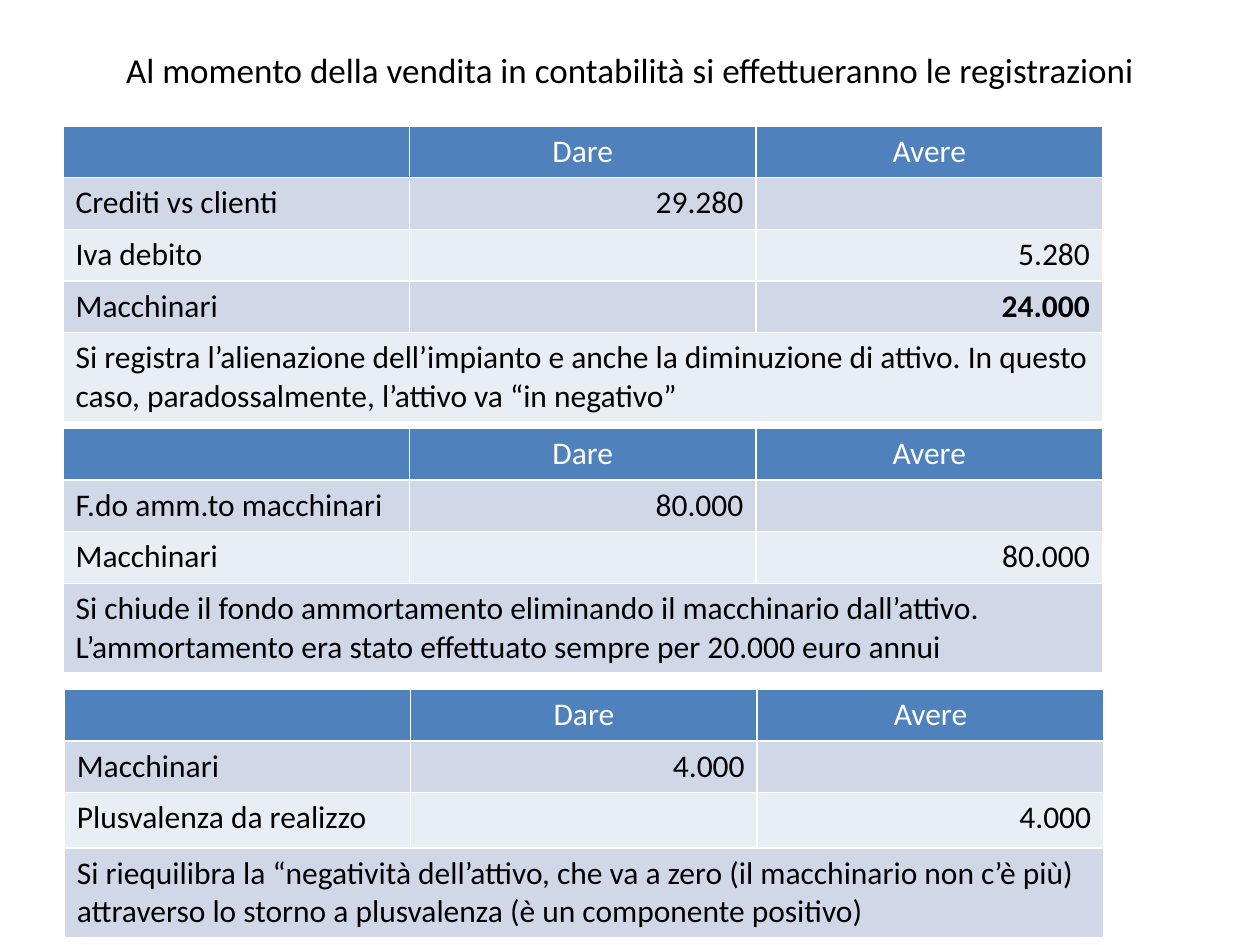
from pptx import Presentation
from pptx.dml.color import RGBColor
from pptx.enum.text import MSO_ANCHOR, PP_ALIGN as Align
from pptx.util import Inches, Pt

FONT = "Calibri"
BLACK, WHITE = "000000", "FFFFFF"
HEADER_FILL = "4F81BD"
BAND_FILLS = ("D0D8E8", "E9EDF4")
LEFT, COLUMN_WIDTH = 0.5, 2.75
ROW_HEIGHT, NOTE_HEIGHT = 0.41, 0.7
HEADINGS = ("", "Dare", "Avere")
COLUMN_ALIGNS = (Align.LEFT, Align.RIGHT, Align.RIGHT)

# Each journal entry: left, top, height of its last posting, postings, note
ENTRIES = [
    (LEFT, 1, ROW_HEIGHT,
     [("Crediti vs clienti", "29.280", ""),
      ("Iva debito", "", "5.280"),
      ("Macchinari", "", "24.000")],
     "Si registra l’alienazione dell’impianto e anche la diminuzione di attivo. "
     "In questo caso, paradossalmente, l’attivo va “in negativo”"),
    (LEFT, 3.4, ROW_HEIGHT,
     [("F.do amm.to macchinari", "80.000", ""),
      ("Macchinari", "", "80.000")],
     "Si chiude il fondo ammortamento eliminando il macchinario dall’attivo. "
     "L’ammortamento era stato effettuato sempre per 20.000 euro annui"),
    (LEFT + 0.01, 5.47, 0.44,
     [("Macchinari", "4.000", ""),
      ("Plusvalenza da realizzo", "", "4.000")],
     "Si riequilibra la “negatività dell’attivo, che va a zero (il macchinario "
     "non c’è più) attraverso lo storno a plusvalenza (è un componente positivo)"),
]
BOLD_AMOUNT = "24.000"


def color(value):
    return RGBColor.from_string(value)


def write(frame, text, size, text_color, align, bold=False):
    para = frame.paragraphs[0]
    para.alignment = align
    span = para.add_run()
    span.text = text
    for name, value in dict(name=FONT, size=Pt(size), bold=bold).items():
        setattr(span.font, name, value)
    span.font.color.rgb = color(text_color)


def add_title(page, text):
    title = page.shapes.title
    place = dict(left=0.5, top=0.3, width=9, height=0.51)
    for name, value in place.items():
        setattr(title, name, Inches(value))
    title.text_frame.vertical_anchor = MSO_ANCHOR.MIDDLE
    write(title.text_frame, text, 20, BLACK, Align.CENTER)


def add_entry(page, left, top, last_height, postings, note):
    """Add a journal table: headings, postings and a note across all columns."""
    rows = [HEADINGS, *postings, (note, "", "")]
    heights = [ROW_HEIGHT] * len(postings) + [last_height, NOTE_HEIGHT]
    columns = len(HEADINGS)
    table = page.shapes.add_table(
        len(rows), columns, Inches(left), Inches(top),
        Inches(columns * COLUMN_WIDTH), Inches(sum(heights))).table
    for row, height in zip(table.rows, heights):
        row.height = Inches(height)
    for r, texts in enumerate(rows):
        is_header = r == 0
        fill = HEADER_FILL if is_header else BAND_FILLS[(r - 1) % 2]
        for c, text in enumerate(texts):
            cell = table.cell(r, c)
            cell.fill.solid()
            cell.fill.fore_color.rgb = color(fill)
            if text:
                write(cell.text_frame, text, 18,
                      WHITE if is_header else BLACK,
                      Align.CENTER if is_header else COLUMN_ALIGNS[c],
                      text == BOLD_AMOUNT)
    last = len(rows) - 1
    table.cell(last, 0).merge(table.cell(last, columns - 1))


def main():
    deck = Presentation()
    deck.slide_width, deck.slide_height = Inches(10), Inches(7.5)
    page = deck.slides.add_slide(deck.slide_layouts.get_by_name("Title Only"))
    add_title(page, "Al momento della vendita in contabilità si effettueranno "
                    "le registrazioni")
    for entry in ENTRIES:
        add_entry(page, *entry)
    deck.save("out.pptx")


if __name__ == "__main__":
    main()
